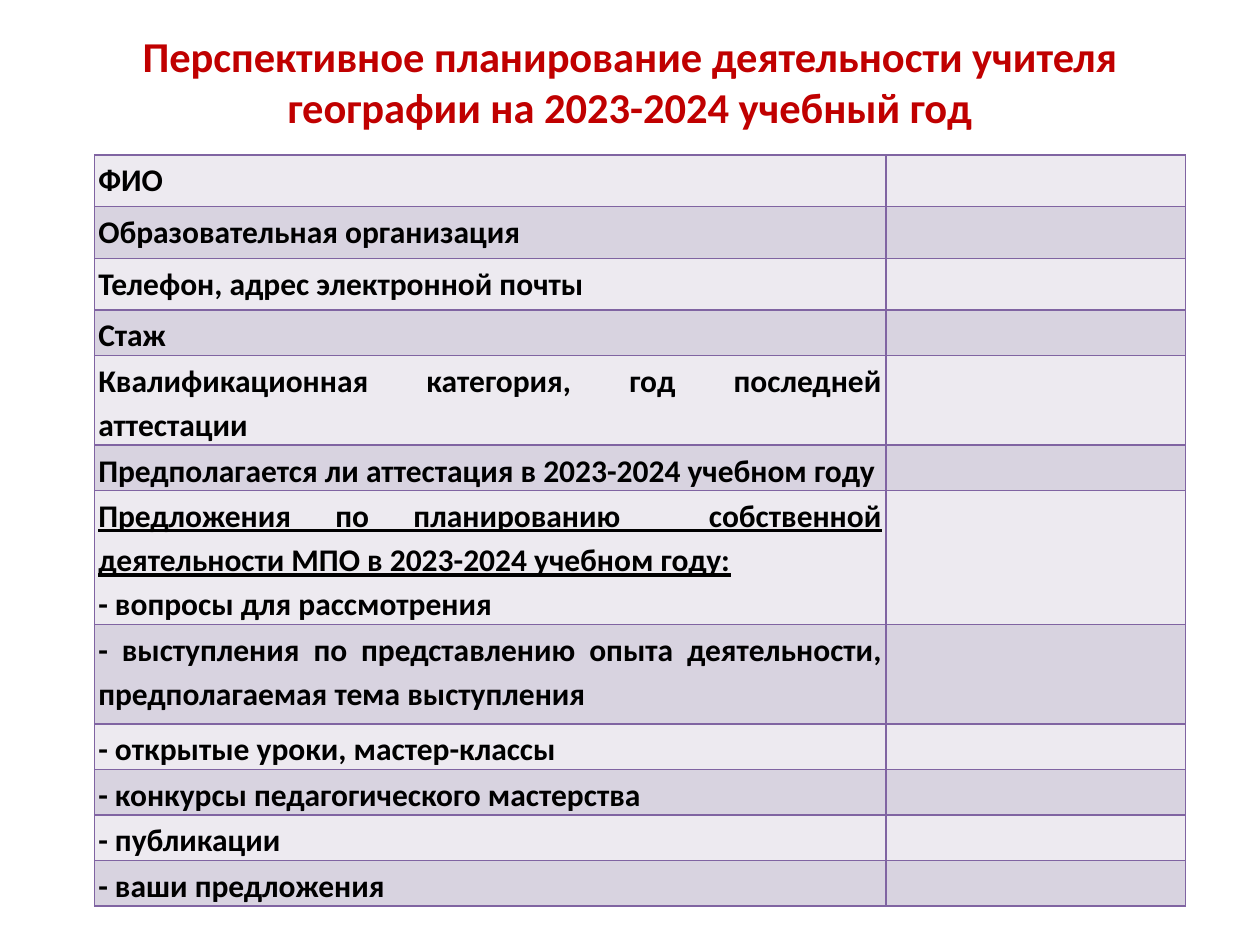
from lxml.etree import SubElement
from pptx import Presentation
from pptx.dml.color import RGBColor
from pptx.enum.text import MSO_ANCHOR, MSO_AUTO_SIZE, PP_ALIGN
from pptx.oxml.ns import qn
from pptx.util import Inches, Pt

COLORS = {
    "title": "C00000",
    "text": "000000",
    "border": "8064A2",
    "light": "EDEAF0",
    "dark": "D8D3E0",
}
COLUMN_WIDTHS = [6.28, 2.38]
ROWS = [
    (0.41, ["ФИО"]),
    (0.41, ["Образовательная организация"]),
    (0.41, ["Телефон, адрес электронной почты"]),
    (0.33, ["Стаж "]),
    (0.25, ["Квалификационная категория, год последней аттестации"]),
    (0.28, ["Предполагается ли аттестация в 2023-2024 учебном году"]),
    (0.79, ["Предложения по планированию  собственной деятельности МПО в 2023-2024 учебном году:",
            "- вопросы для рассмотрения"]),
    (0.79, ["- выступления по представлению опыта деятельности, предполагаемая тема выступления"]),
    (0.33, ["- открытые уроки, мастер-классы"]),
    (0.33, ["- конкурсы педагогического мастерства"]),
    (0.33, ["- публикации"]),
    (0.33, ["- ваши предложения"]),
]


def write_text(paragraph, text, size=18, color="text", align=PP_ALIGN.JUSTIFY,
               spacing=None, underline=False):
    paragraph.alignment = align
    paragraph.line_spacing = spacing
    run = paragraph.add_run()
    run.text = text
    font = run.font
    font.name = "Calibri"
    font.size = Pt(size)
    font.bold = True
    font.underline = underline
    font.color.rgb = RGBColor.from_string(COLORS[color])


class PlanSlide:
    """Holds the style and the current slide of the yearly plan."""

    def __init__(self, presentation):
        self.slide = presentation.slides.add_slide(presentation.slide_layouts[5])

    def title(self, text, left, top, width, height):
        shape = self.slide.shapes.title
        shape.left, shape.top = Inches(left), Inches(top)
        shape.width, shape.height = Inches(width), Inches(height)
        frame = shape.text_frame
        frame.word_wrap = True
        frame.auto_size = MSO_AUTO_SIZE.NONE
        frame.vertical_anchor = MSO_ANCHOR.MIDDLE
        write_text(frame.paragraphs[0], text, size=24.3, color="title", align=PP_ALIGN.CENTER)

    def style_cell(self, cell, fill):
        cell.margin_left = cell.margin_right = Inches(0.03)
        cell.margin_top, cell.margin_bottom = Inches(0.01), 0
        properties = cell._tc.get_or_add_tcPr()
        for side in ("a:lnL", "a:lnR", "a:lnT", "a:lnB"):
            line = SubElement(properties, qn(side), w=str(Pt(1)))
            solid = SubElement(line, qn("a:solidFill"))
            SubElement(solid, qn("a:srgbClr"), val=COLORS["border"])
        cell.fill.solid()
        cell.fill.fore_color.rgb = RGBColor.from_string(COLORS[fill])

    def table(self, rows, column_widths, left, top):
        height = sum(row_height for row_height, _ in rows)
        table = self.slide.shapes.add_table(
            len(rows), len(column_widths), Inches(left), Inches(top),
            Inches(sum(column_widths)), Inches(height)).table
        table.first_row = False
        for column, width in zip(table.columns, column_widths):
            column.width = Inches(width)
        for index, (row_height, lines) in enumerate(rows):
            row = table.rows[index]
            row.height = Inches(row_height)
            for cell in row.cells:
                self.style_cell(cell, "dark" if index % 2 else "light")
            frame = row.cells[0].text_frame
            for number, line in enumerate(lines):
                paragraph = frame.add_paragraph() if number else frame.paragraphs[0]
                write_text(paragraph, line, spacing=1.15, underline=line.endswith(":"))


def main():
    presentation = Presentation()
    presentation.slide_width, presentation.slide_height = Inches(10), Inches(7.5)
    plan = PlanSlide(presentation)
    plan.title("Перспективное планирование деятельности учителя географии на 2023-2024 учебный год",
               0.5, 0.3, 9, 0.69)
    plan.table(ROWS, COLUMN_WIDTHS, 0.75, 1.23)
    presentation.save("out.pptx")


if __name__ == "__main__":
    main()
